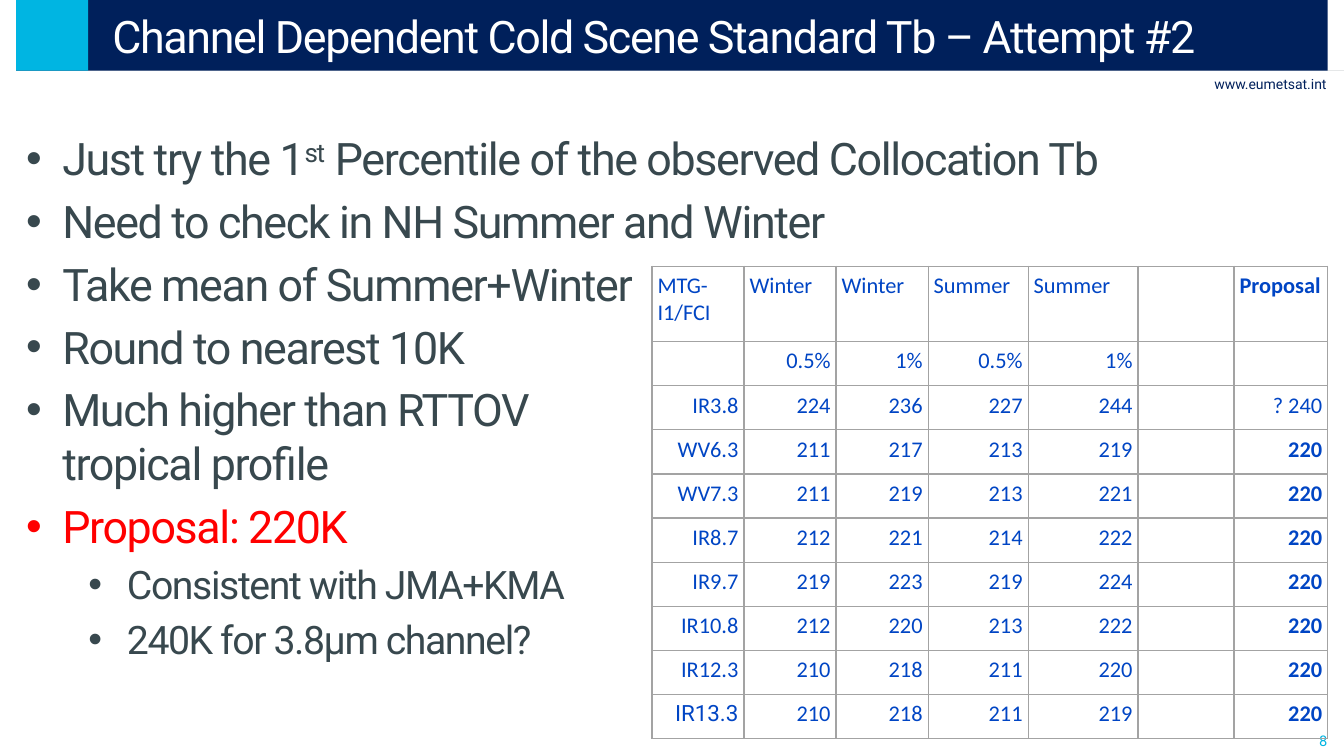
from collections import namedtuple
from dataclasses import dataclass

from lxml.etree import SubElement
from pptx import Presentation
from pptx.dml.color import RGBColor
from pptx.enum.shapes import MSO_CONNECTOR, MSO_SHAPE
from pptx.enum.text import MSO_ANCHOR, MSO_AUTO_SIZE, PP_ALIGN
from pptx.oxml import parse_xml
from pptx.oxml.ns import nsdecls, qn
from pptx.util import Cm, Pt

Box = namedtuple("Box", "left top width height")


@dataclass(frozen=True)
class Theme:
    """Colours, fonts and type sizes of the deck."""
    navy: str = "00205B"
    cyan: str = "00B5E2"
    slate: str = "38484E"
    white: str = "FFFFFF"
    red: str = "FF0000"
    table_blue: str = "0045C4"
    grid: str = "A3A3A3"
    font: str = "Roboto"
    table_font: str = "Calibri"
    title_size: float = 32
    bullet_sizes: tuple = (32, 28)
    table_size: float = 16
    address_size: float = 10
    number_size: float = 10.5


THEME = Theme()
ORDINAL = "st"
BULLET_INDENTS = ((0.91, -0.91), (2.54, -0.97))
BULLETS = [
    (0, THEME.slate, ("Just try the 1", ORDINAL, " Percentile of the observed Collocation Tb")),
    (0, THEME.slate, ("Need to check in NH Summer and Winter",)),
    (0, THEME.slate, ("Take mean of Summer+Winter",)),
    (0, THEME.slate, ("Round to nearest 10K",)),
    (0, THEME.slate, ("Much higher than RTTOV\vtropical profile",)),
    (0, THEME.red, ("Proposal: 220K",)),
    (1, THEME.slate, ("Consistent with JMA+KMA",)),
    (1, THEME.slate, ("240K for 3.8µm channel?",)),
]
COLUMN_WIDTHS = (2.32, 2.32, 2.32, 2.52, 2.77, 2.42, 2.36)
HEADER_HEIGHT = 1.9
ROWS = [
    ("MTG-I1/FCI", "Winter", "Winter", "Summer", "Summer", "", "Proposal"),
    ("", "0.5%", "1%", "0.5%", "1%", "", ""),
    ("IR3.8", "224", "236", "227", "244", "", "? 240"),
    ("WV6.3", "211", "217", "213", "219", "", "220"),
    ("WV7.3", "211", "219", "213", "221", "", "220"),
    ("IR8.7", "212", "221", "214", "222", "", "220"),
    ("IR9.7", "219", "223", "219", "224", "", "220"),
    ("IR10.8", "212", "220", "213", "222", "", "220"),
    ("IR12.3", "210", "218", "211", "220", "", "220"),
    ("IR13.3", "210", "218", "211", "219", "", "220"),
]


def lengths(box):
    """Return the sides of a box as Cm lengths."""
    return [Cm(side) for side in box]


def style(para, size, color, font=THEME.font, bold=False, spacing=0):
    """Format every run of a paragraph."""
    for span in para.runs:
        span.font.size = Pt(size)
        span.font.name = font
        span.font.bold = bold
        span.font.color.rgb = RGBColor.from_string(color)
        if spacing:
            span.font._element.set("spc", str(spacing))


def add_label(page, box, text, size, color):
    """Add a small right-aligned label."""
    frame = page.shapes.add_textbox(*lengths(box)).text_frame
    frame.word_wrap = False
    para = frame.paragraphs[0]
    para.text = text
    para.alignment = PP_ALIGN.RIGHT
    style(para, size, color)


def add_band(page, box, color):
    """Add a plain filled rectangle."""
    band = page.shapes.add_shape(MSO_SHAPE.RECTANGLE, *lengths(box))
    band.shadow.inherit = False
    band.fill.solid()
    band.fill.fore_color.rgb = RGBColor.from_string(color)
    band.line.fill.background()


def add_rule(page, left, right, y):
    """Add the faint horizontal rule under the header."""
    rule = page.shapes.add_connector(
        MSO_CONNECTOR.STRAIGHT, Cm(left), Cm(y), Cm(right), Cm(y))
    rule.line.width = Pt(0.5)
    rule.line.color.rgb = RGBColor.from_string(THEME.slate)
    color = rule.line._ln.find(".//" + qn("a:srgbClr"))
    SubElement(color, qn("a:alpha")).set("val", "20000")
    SubElement(rule._element.spPr, qn("a:effectLst"))


def add_header(page, box, text):
    """Add the band, its accent square, the rule and the title."""
    bottom = box.top + box.height
    add_rule(page, box.left, 33.87, bottom)
    add_band(page, box, THEME.navy)
    add_band(page, box._replace(width=box.height), THEME.cyan)
    title = page.shapes.title
    page.shapes._spTree.append(title._element)
    left = box.left + box.height
    title.left, title.top, title.width, title.height = lengths(
        Box(left, 0, 33.87 - left, bottom))
    frame = title.text_frame
    frame.text = text
    frame.auto_size = MSO_AUTO_SIZE.NONE
    frame.vertical_anchor = MSO_ANCHOR.MIDDLE
    frame.margin_left = 0
    frame.margin_right = frame.margin_top = frame.margin_bottom = Cm(0.1)
    para = frame.paragraphs[0]
    para.alignment = PP_ALIGN.LEFT
    para._p.get_or_add_pPr().set("marL", str(Cm(0.61)))
    style(para, THEME.title_size, THEME.white, spacing=-100)


def add_bullets(page, box):
    """Add the two-level bullet list."""
    frame = page.shapes.add_textbox(*lengths(box)).text_frame
    frame.word_wrap = True
    for index, (level, color, pieces) in enumerate(BULLETS):
        para = frame.add_paragraph() if index else frame.paragraphs[0]
        para.text = pieces[0]
        for piece in pieces[1:]:
            para.add_run().text = piece
        para.level = level
        margin, indent = BULLET_INDENTS[level]
        properties = para._p.get_or_add_pPr()
        properties.set("marL", str(Cm(margin)))
        properties.set("indent", str(Cm(indent)))
        SubElement(properties, qn("a:buFont")).set("typeface", "Arial")
        SubElement(properties, qn("a:buChar")).set("char", "•")
        size = THEME.bullet_sizes[level]
        if index:
            para.space_before = Pt(0.2 * size)
        style(para, size, color, spacing=-100)
        for span in para.runs:
            if span.text == ORDINAL:
                span.font._element.set("baseline", "30000")


def add_borders(cell):
    """Draw a thin grey line on each side of a cell."""
    properties = cell._tc.get_or_add_tcPr()
    for index, side in enumerate(("lnL", "lnR", "lnT", "lnB")):
        properties.insert(index, parse_xml(
            f'<a:{side} {nsdecls("a")} w="{Pt(1)}"><a:solidFill>'
            f'<a:srgbClr val="{THEME.grid}"/></a:solidFill></a:{side}>'))


def add_channel_table(page, box):
    """Add the table of channel brightness temperatures."""
    table = page.shapes.add_table(
        len(ROWS), len(COLUMN_WIDTHS), *lengths(box)).table
    for column, width in zip(table.columns, COLUMN_WIDTHS):
        column.width = Cm(width)
    row_height = (box.height - HEADER_HEIGHT) / (len(ROWS) - 1)
    for row, values in enumerate(ROWS):
        table.rows[row].height = Cm(row_height if row else HEADER_HEIGHT)
        for column, value in enumerate(values):
            cell = table.cell(row, column)
            cell.fill.background()
            add_borders(cell)
            cell.margin_left = cell.margin_right = Cm(0.14)
            cell.margin_top = cell.margin_bottom = Cm(0.15)
            para = cell.text_frame.paragraphs[0]
            para.text = value
            para.alignment = PP_ALIGN.RIGHT if row else PP_ALIGN.LEFT
            style(para, THEME.table_size, THEME.table_blue,
                  THEME.font if value == "IR13.3" else THEME.table_font,
                  bold=value in ("Proposal", "220") and column == 6)


def main():
    """Build the slide and save the deck."""
    deck = Presentation()
    deck.slide_width, deck.slide_height = Cm(33.87), Cm(19.05)
    page = deck.slides.add_slide(deck.slide_layouts[5])
    add_label(page, Box(30.28, 1.78, 3.4, 0.69), "www.eumetsat.int",
              THEME.address_size, THEME.navy)
    add_label(page, Box(32, 18.31, 1.7, 0.74), "8",
              THEME.number_size, THEME.cyan)
    add_header(page, Box(0.41, -0.03, 33.05, 1.81),
               "Channel Dependent Cold Scene Standard Tb – Attempt #2")
    add_bullets(page, Box(0.41, 3.18, 33.07, 15.44))
    add_channel_table(page, Box(16.43, 6.71, 17.03, 11.9))
    deck.save("out.pptx")


if __name__ == "__main__":
    main()
